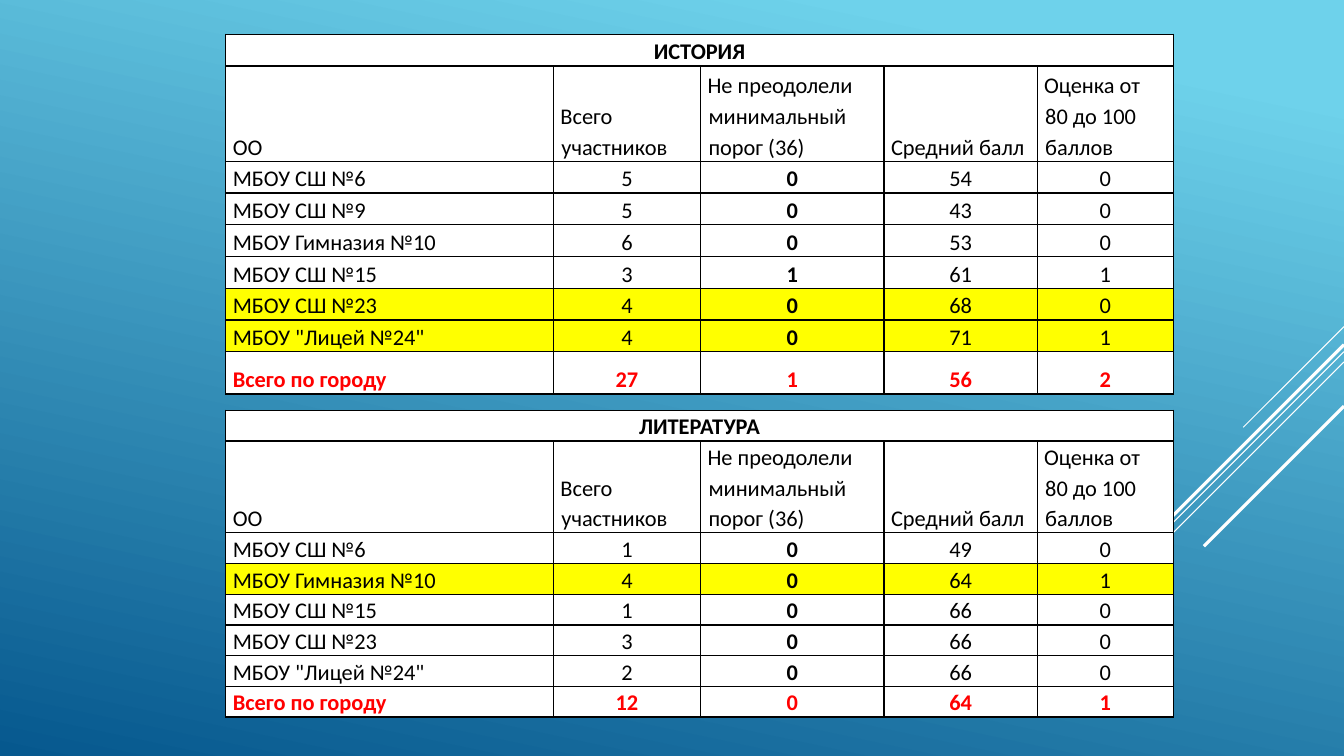
from dataclasses import dataclass

from lxml.etree import SubElement
from pptx import Presentation
from pptx.dml.color import RGBColor
from pptx.enum.shapes import MSO_CONNECTOR
from pptx.enum.text import MSO_ANCHOR, PP_ALIGN
from pptx.oxml import parse_xml
from pptx.oxml.ns import nsdecls, qn
from pptx.slide import Slide
from pptx.table import _Cell as Cell
from pptx.util import Inches, Length, Pt


@dataclass(frozen=True)
class Theme:
    font: str = "Calibri"
    size: float = 16
    line_spacing: float = 1.12
    border: float = 1
    black: str = "000000"
    white: str = "FFFFFF"
    yellow: str = "FFFF00"
    red: str = "FF0000"
    sky: str = "6ED2EB"
    deep_blue: str = "06588E"


@dataclass(frozen=True)
class Ray:
    """A 45° line from the right edge; start and reach in % of slide height."""
    start: float
    reach: float
    weight: float


@dataclass(frozen=True)
class School:
    name: str
    values: tuple[int, int, int, int]
    highlighted: bool = False


@dataclass(frozen=True)
class Subject:
    """One exam table; top and height in % of slide height."""
    title: str
    top: float
    height: float
    total_weight: float
    schools: tuple[School, ...]
    total: tuple[int, int, int, int]


THEME = Theme()
WIDTH, HEIGHT = Inches(13.33), Inches(7.5)
TABLE_LEFT = 16.8
COLUMNS = (24.38, 10.95, 13.65, 11.4, 10.13)
HEADINGS = ("ОО", "Всего участников", "Не преодолели минимальный порог (36)",
            "Средний балл", "Оценка от 80 до 100 баллов")
BELOW_THRESHOLD = 2
RAYS = (
    Ray(43.2, 13.33, 0.75),
    Ray(46.53, 43.47, 0.75),
    Ray(47.87, 27.6, 0.75),
    Ray(45.6, 25.47, 2.25),
    Ray(53.73, 18.53, 2.25),
)
SUBJECTS = (
    Subject("ИСТОРИЯ", 4.53, 47.6, 1.33, (
        School("МБОУ СШ №6", (5, 0, 54, 0)),
        School("МБОУ СШ №9", (5, 0, 43, 0)),
        School("МБОУ Гимназия №10", (6, 0, 53, 0)),
        School("МБОУ СШ №15", (3, 1, 61, 1)),
        School("МБОУ СШ №23", (4, 0, 68, 0), True),
        School('МБОУ "Лицей №24"', (4, 0, 71, 1), True),
    ), (27, 1, 56, 2)),
    Subject("ЛИТЕРАТУРА", 54.27, 40.53, 1, (
        School("МБОУ СШ №6", (1, 0, 49, 0)),
        School("МБОУ Гимназия №10", (4, 0, 64, 1), True),
        School("МБОУ СШ №15", (1, 0, 66, 0)),
        School("МБОУ СШ №23", (3, 0, 66, 0)),
        School('МБОУ "Лицей №24"', (2, 0, 66, 0)),
    ), (12, 0, 64, 1)),
)


def across(percent: float) -> Length:
    return Length(round(WIDTH * percent / 100))


def down(percent: float) -> Length:
    return Length(round(HEIGHT * percent / 100))


def paint_background(slide: Slide) -> None:
    fill = slide.background.fill
    fill.gradient()
    fill.gradient_angle = 258
    for stop, position, color in zip(fill.gradient_stops, (0.1, 1), (THEME.sky, THEME.deep_blue)):
        stop.position = position
        stop.color.rgb = RGBColor.from_string(color)


def draw_ray(slide: Slide, ray: Ray) -> None:
    reach = down(ray.reach)
    start = down(ray.start)
    connector = slide.shapes.add_connector(
        MSO_CONNECTOR.STRAIGHT, WIDTH, start, WIDTH - reach, start + reach)
    connector.line.color.rgb = RGBColor.from_string(THEME.white)
    connector.line.width = Pt(ray.weight)
    SubElement(connector._element.spPr, qn("a:effectLst"))


def add_borders(cell: Cell) -> None:
    properties = cell._tc.get_or_add_tcPr()
    for index, side in enumerate(("lnL", "lnR", "lnT", "lnB")):
        properties.insert(index, parse_xml(
            f'<a:{side} {nsdecls("a")} w="{Pt(THEME.border)}"><a:solidFill>'
            f'<a:srgbClr val="{THEME.black}"/></a:solidFill></a:{side}>'))


def fill_cell(cell: Cell, text: str, fill: str, color: str, bold: bool, centered: bool) -> None:
    cell.vertical_anchor = MSO_ANCHOR.BOTTOM
    cell.margin_left = cell.margin_right = Inches(0.07)
    cell.margin_top = cell.margin_bottom = 0
    cell.fill.solid()
    cell.fill.fore_color.rgb = RGBColor.from_string(fill)
    add_borders(cell)
    cell.text_frame.text = text
    paragraph = cell.text_frame.paragraphs[0]
    paragraph.alignment = PP_ALIGN.CENTER if centered else PP_ALIGN.LEFT
    paragraph.line_spacing = THEME.line_spacing
    indent = Inches(0.01)
    paragraph_properties = paragraph._p.get_or_add_pPr()
    paragraph_properties.set("marL", str(indent))
    paragraph_properties.set("indent", str(-indent))
    font = paragraph.runs[0].font if text else paragraph.font
    font.name = THEME.font
    font.size = Pt(THEME.size)
    font.bold = bold
    font.color.rgb = RGBColor.from_string(color)


def draw_subject(slide: Slide, subject: Subject) -> None:
    weights = (1, 3, *(1 for _ in subject.schools), subject.total_weight)
    table = slide.shapes.add_table(
        len(weights), len(COLUMNS), across(TABLE_LEFT), down(subject.top),
        across(sum(COLUMNS)), down(subject.height)).table
    table.first_row = table.horz_banding = False
    for column, share in zip(table.columns, COLUMNS):
        column.width = across(share)
    for row, weight in zip(table.rows, weights):
        row.height = down(subject.height * weight / sum(weights))

    for index, heading in enumerate(HEADINGS):
        title = "" if index else subject.title
        fill_cell(table.cell(0, index), title, THEME.white, THEME.black, True, True)
        fill_cell(table.cell(1, index), heading, THEME.white, THEME.black, False, False)
    table.cell(0, 0).merge(table.cell(0, len(COLUMNS) - 1))

    total = School("Всего по городу", subject.total)
    for row_index, school in enumerate((*subject.schools, total), start=2):
        is_total = school is total
        fill = THEME.yellow if school.highlighted else THEME.white
        color = THEME.red if is_total else THEME.black
        for index, value in enumerate((school.name, *school.values)):
            bold = is_total or index == BELOW_THRESHOLD
            fill_cell(table.cell(row_index, index), str(value), fill, color, bold, index > 0)


def main() -> None:
    presentation = Presentation()
    presentation.slide_width, presentation.slide_height = WIDTH, HEIGHT
    slide = presentation.slides.add_slide(presentation.slide_layouts[6])
    paint_background(slide)
    for ray in RAYS:
        draw_ray(slide, ray)
    for subject in SUBJECTS:
        draw_subject(slide, subject)
    presentation.save("out.pptx")


if __name__ == "__main__":
    main()
